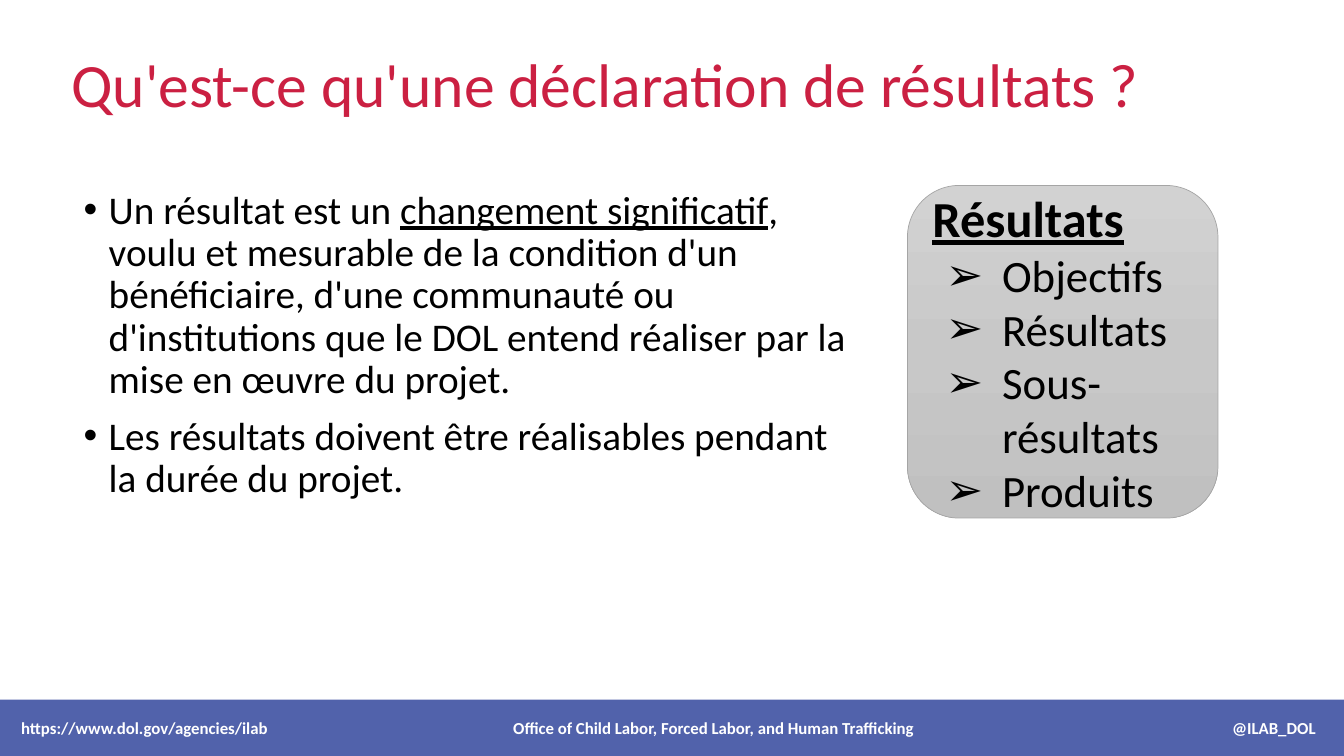
from copy import deepcopy

from lxml import etree
from pptx import Presentation
from pptx import util as u
from pptx.dml.color import RGBColor
from pptx.enum import shapes, text
from pptx.oxml.ns import qn

WIDTH, HEIGHT = 13.33, 7.5
FONT = "Calibri"
HUES = {"title": "CB2042", "ink": "000000", "white": "FFFFFF", "bar": "3F51A2",
        "edge": "A5A5A5", "top": "D2D2D2", "mid": "C8C8C8", "low": "C0C0C0"}
TOP, TALL = 1.84, 3.3  # row shared by the body and the panel


def hue(name):
    return RGBColor.from_string(HUES[name])


def inches(*box):
    return [u.Inches(n) for n in box]


def add_text(frame, runs, size, color="ink", bold=False, line=None, before=0,
             bullet=None, indent=(0, 0), level=0, tabs=()):
    """Add a paragraph; runs is a string or a list of (string, underline)."""
    para = frame.paragraphs[0]
    if para.runs:
        para = frame.add_paragraph()
        para.space_before = u.Pt(before)
    para.level = level
    props = para._p.get_or_add_pPr()
    if bullet:
        left, hang = inches(*indent)
        props.set("marL", str(left))
        props.set("indent", str(hang))
        etree.SubElement(props, qn("a:buFont"), typeface="Arial")
        etree.SubElement(props, qn("a:buChar"), char=bullet)
    if tabs:
        stops = etree.SubElement(props, qn("a:tabLst"))
        for pos, side in tabs:
            etree.SubElement(stops, qn("a:tab"), pos=str(u.Inches(pos)), algn=side)
    para.alignment = text.PP_ALIGN.LEFT
    if line:
        para.line_spacing = line
    for words, under in [(runs, False)] if isinstance(runs, str) else runs:
        run = para.add_run()
        run.text = words
        font = run.font
        font.name, font.size, font.bold = FONT, u.Pt(size), bold
        font.underline = under
        font.color.rgb = hue(color)


def add_frame(shape, anchor):
    frame = shape.text_frame
    frame.word_wrap = True
    frame.auto_size = text.MSO_AUTO_SIZE.NONE
    frame.vertical_anchor = anchor
    return frame


def add_title(slide, box):
    title = slide.shapes.title
    title.left, title.top, title.width, title.height = inches(*box)
    frame = add_frame(title, text.MSO_ANCHOR.MIDDLE)
    add_text(frame, "Qu'est-ce qu'une déclaration de résultats ?", 44, "title", line=0.9)


def add_body(slide, box):
    frame = add_frame(slide.shapes.add_textbox(*inches(*box)), text.MSO_ANCHOR.TOP)
    points = [
        [("Un résultat est un ", False), ("changement significatif", True),
         (", voulu et mesurable de la condition d'un bénéficiaire, d'une communauté "
          "ou d'institutions que le DOL entend réaliser par la mise en œuvre du projet.",
          False)],
        "Les résultats doivent être réalisables pendant la durée du projet.",
    ]
    for point in points:
        add_text(frame, point, 28, line=0.9, before=10, bullet="•", indent=(0.25, -0.25))


def add_panel(slide, box):
    panel = slide.shapes.add_shape(shapes.MSO_SHAPE.ROUNDED_RECTANGLE, *inches(*box))
    panel.shadow.inherit = False
    panel.line.color.rgb = hue("edge")
    panel.line.width = u.Pt(0.5)
    # Three-stop grey gradient, running downwards
    fill = panel.fill
    fill.gradient()
    fill.gradient_angle = 270
    first = panel._element.spPr.find(".//" + qn("a:gs"))
    first.addnext(deepcopy(first))
    for stop, spot, name in zip(fill.gradient_stops, (0, 0.5, 1), ("top", "mid", "low")):
        stop.position = spot
        stop.color.rgb = hue(name)
    # Heading and list
    frame = add_frame(panel, text.MSO_ANCHOR.MIDDLE)
    add_text(frame, [("Résultats", True)], 36, bold=True)
    for item in ("Objectifs", "Résultats", "Sous-résultats", "Produits"):
        add_text(frame, item, 32, bullet="➢", indent=(0.69, -0.56), level=1)


def add_footer(slide, box):
    bar = slide.shapes.add_shape(shapes.MSO_SHAPE.RECTANGLE, *inches(*box))
    bar.shadow.inherit = False
    bar.line.fill.background()
    bar.fill.solid()
    bar.fill.fore_color.rgb = hue("bar")
    tint = bar._element.spPr.find(".//" + qn("a:srgbClr"))
    etree.SubElement(tint, qn("a:alpha"), val="90000")
    # Left, centred and right parts on tab stops
    pad = 0.21
    frame = add_frame(bar, text.MSO_ANCHOR.MIDDLE)
    frame.margin_left = u.Inches(pad)
    parts = ("https://www.dol.gov/agencies/ilab",
             "Office of Child Labor, Forced Labor, and Human Trafficking", "@ILAB_DOL")
    add_text(frame, "\t".join(parts), 12, "white", bold=True,
             tabs=((7.08 - pad, "ctr"), (13.05 - pad, "r")))


def main():
    deck = Presentation()
    deck.slide_width, deck.slide_height = inches(WIDTH, HEIGHT)
    slide = deck.slides.add_slide(deck.slide_layouts[5])
    add_title(slide, (0.61, 0.14, 11.31, 1.45))
    add_body(slide, (0.73, TOP, 7.89, TALL))
    add_panel(slide, (9, TOP, 3.08, TALL))
    add_footer(slide, (0, HEIGHT - 0.56, 13.37, 0.56))
    deck.save("out.pptx")


if __name__ == "__main__":
    main()
